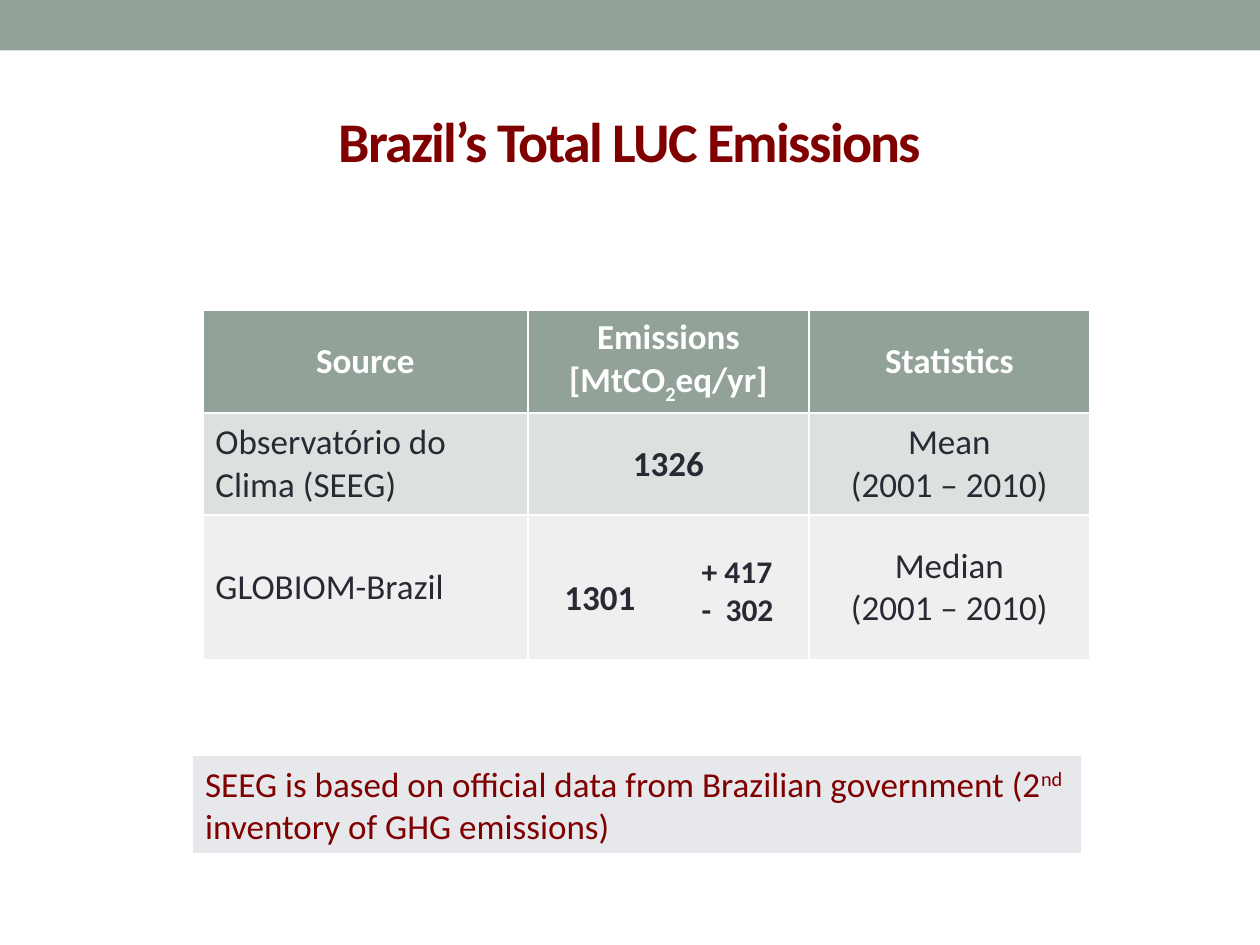
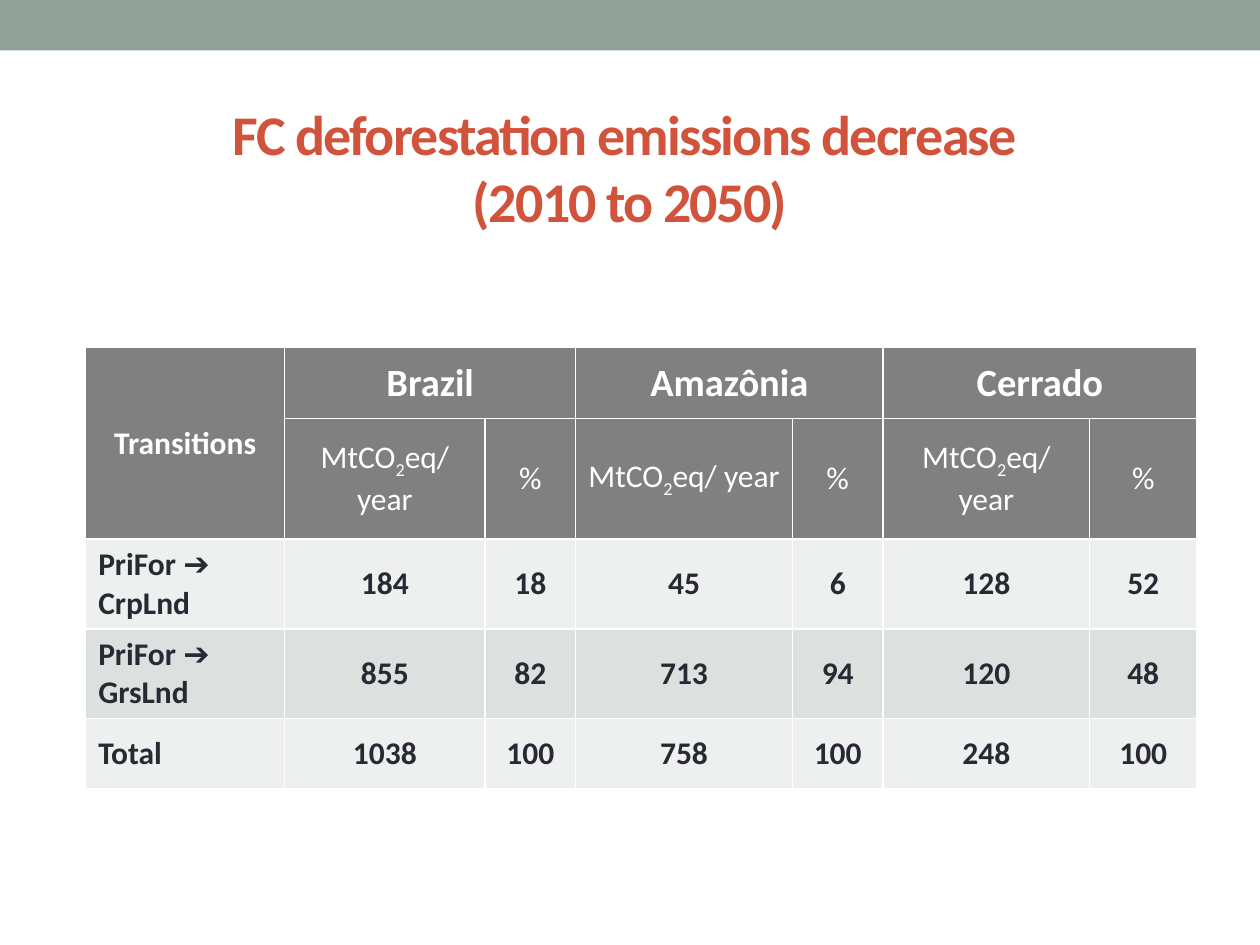
import pptx
import pptx.dml.color
import pptx.enum.text
import pptx.util
from lxml import etree
from pptx.oxml.ns import qn

Inches, Pt = pptx.util.Inches, pptx.util.Pt
RGBColor = pptx.dml.color.RGBColor
ALIGN = pptx.enum.text.PP_ALIGN
ANCHOR = pptx.enum.text.MSO_ANCHOR
AUTO_SIZE = pptx.enum.text.MSO_AUTO_SIZE

SAGE = RGBColor(0x93, 0xA2, 0x99)
GRAY = RGBColor(0x80, 0x80, 0x80)
WHITE = RGBColor(0xFF, 0xFF, 0xFF)
INK = RGBColor(0x29, 0x29, 0x34)
MAROON = RGBColor(0x80, 0x00, 0x00)
ORANGE = RGBColor(0xD2, 0x53, 0x3C)
DARK_ROW = RGBColor(0xDC, 0xE0, 0xDE)
LIGHT_ROW = RGBColor(0xEE, 0xF0, 0xEF)
PALE = RGBColor(0xE6, 0xE8, 0xEC)
FONT = "Calibri"
SUB, SUPER, ARROW = "-25000", "30000", "Arial"

PERIOD = "(2001 – 2010)"
TOTAL_TITLE = "Brazil’s Total LUC Emissions"
TOTAL_ROWS = [
    ["Source", [("Emissions [MtCO", ("2", SUB), "eq/yr]")], "Statistics"],
    ["Observatório do Clima (SEEG)", "1326", ["Mean", PERIOD]],
    ["GLOBIOM-Brazil", "1301", ["Median", PERIOD]],
]
TOTAL_WIDTHS = [2.58, 2.23, 2.23]
TOTAL_HEIGHTS = [0.81, 0.81, 1.15]
RANGE = ["+ 417", "-\t302"]
NOTE = [("SEEG is based on official data from Brazilian government (2",
         ("nd", SUPER), " inventory of GHG emissions)")]

DECREASE_TITLE = "FC deforestation emissions decrease \v(2010 to 2050)"
REGIONS = ["Brazil", "Amazônia", "Cerrado"]
UNIT = [("MtCO", ("2", SUB), "eq/ year")]
LAST_UNIT = [("MtCO", ("2", SUB), "eq/year")]
DECREASE_ROWS = [
    ["Transitions"] + [part for region in REGIONS for part in (region, "")],
    ["", UNIT, "%", UNIT, "%", LAST_UNIT, "%"],
    [[("PriFor ", ("➔ ", ARROW), "CrpLnd")], "184", "18", "45", "6", "128", "52"],
    [[("PriFor ", ("➔", ARROW)), "GrsLnd"], "855", "82", "713", "94", "120", "48"],
    ["Total", "1038", "100", "758", "100", "248", "100"],
]
DECREASE_WIDTHS = [1.58, 1.59, 0.72, 1.72, 0.72, 1.64, 0.85]
DECREASE_HEIGHTS = [0.56, 0.96, 0.71, 0.71, 0.56]


def write(frame, content, size, color, bold=False, align=ALIGN.LEFT, tab=None):
    lines = [content] if isinstance(content, str) else content
    for index, line in enumerate(lines):
        paragraph = frame.paragraphs[0] if index == 0 else frame.add_paragraph()
        paragraph.alignment = align
        if tab:
            stops = etree.SubElement(paragraph._p.get_or_add_pPr(), qn("a:tabLst"))
            etree.SubElement(stops, qn("a:tab"), pos=str(Inches(tab)), algn="l")
        paragraph.font.name = FONT
        paragraph.font.size = Pt(size)
        paragraph.font.bold = bold
        paragraph.font.color.rgb = color
        for piece in [line] if isinstance(line, str) else line:
            text, style = (piece, None) if isinstance(piece, str) else piece
            run = paragraph.add_run()
            run.text = text
            if style == ARROW:
                run.font.name = ARROW
            elif style:
                run._r.get_or_add_rPr().set("baseline", style)


def add_band(slide, layout):
    band = slide.shapes.add_shape(
        pptx.enum.shapes.MSO_SHAPE.RECTANGLE, 0, 0, Inches(10), Inches(0.4))
    band.shadow.inherit = False
    band.fill.solid()
    band.fill.fore_color.rgb = SAGE
    band.line.fill.background()
    layout.shapes.element.insert(2, band.element)


def set_title(slide, text, color, top, height):
    title = slide.shapes.title
    title.left, title.top = Inches(0.5), Inches(top)
    title.width, title.height = Inches(9), Inches(height)
    frame = title.text_frame
    frame.vertical_anchor = ANCHOR.MIDDLE
    frame.auto_size = AUTO_SIZE.NONE
    frame.text = text
    paragraph = frame.paragraphs[0]
    paragraph.alignment = ALIGN.CENTER
    paragraph.font.name = FONT
    paragraph.font.size = Pt(32)
    paragraph.font.bold = True
    paragraph.font.color.rgb = color
    for run in paragraph.runs:
        run._r.get_or_add_rPr().set("spc", "-100")


def add_grid(slide, left, top, widths, heights, fills):
    grid = slide.shapes.add_table(
        len(heights), len(widths), Inches(left), Inches(top),
        Inches(sum(widths)), Inches(sum(heights))).table
    grid.horz_banding = False
    for column, width in zip(grid.columns, widths):
        column.width = Inches(width)
    for row, height, fill in zip(grid.rows, heights, fills):
        row.height = Inches(height)
        for cell in row.cells:
            cell.fill.solid()
            cell.fill.fore_color.rgb = fill
            cell.vertical_anchor = ANCHOR.MIDDLE
    return grid


def add_text(slide, left, top, width, height, wrap):
    box = slide.shapes.add_textbox(
        Inches(left), Inches(top), Inches(width), Inches(height))
    box.text_frame.word_wrap = wrap
    box.text_frame.auto_size = AUTO_SIZE.SHAPE_TO_FIT_TEXT
    return box


def build_total(slide):
    set_title(slide, TOTAL_TITLE, MAROON, 0.57, 1.08)
    grid = add_grid(slide, 1.61, 2.46, TOTAL_WIDTHS, TOTAL_HEIGHTS,
                    [SAGE, DARK_ROW, LIGHT_ROW])
    for r, row in enumerate(TOTAL_ROWS):
        for c, content in enumerate(row):
            header = r == 0
            write(grid.cell(r, c).text_frame, content, 20,
                  WHITE if header else INK, header or c == 1,
                  ALIGN.CENTER if header or c else ALIGN.LEFT)
    median = grid.cell(2, 1)
    median.margin_left = Inches(0.29)
    median.text_frame.paragraphs[0].alignment = ALIGN.LEFT
    median.text_frame.paragraphs[0].line_spacing = 1.5

    spread = add_text(slide, 5.47, 4.33, 0.78, 0.71, False)
    write(spread.text_frame, RANGE, 18, INK, True, tab=0.19)
    note = add_text(slide, 1.53, 6, 7.05, 0.77, True)
    note.fill.solid()
    note.fill.fore_color.rgb = PALE
    write(note.text_frame, NOTE, 20, MAROON)


def build_decrease(slide):
    set_title(slide, DECREASE_TITLE, ORANGE, 0.49, 1.67)
    grid = add_grid(slide, 0.68, 2.76, DECREASE_WIDTHS, DECREASE_HEIGHTS,
                    [GRAY, GRAY, LIGHT_ROW, DARK_ROW, LIGHT_ROW])
    grid.cell(0, 0).merge(grid.cell(1, 0))
    for c in range(1, len(DECREASE_WIDTHS), 2):
        grid.cell(0, c).merge(grid.cell(0, c + 1))
    for r, row in enumerate(DECREASE_ROWS):
        for c, content in enumerate(row):
            if grid.cell(r, c).is_spanned:
                continue
            write(grid.cell(r, c).text_frame, content,
                  22 if r == 0 and c else 18,
                  WHITE if r < 2 else INK, r != 1,
                  ALIGN.CENTER if r < 2 or c else ALIGN.LEFT)


def main():
    deck = pptx.Presentation()
    deck.slide_width, deck.slide_height = Inches(10), Inches(7.5)
    layout = deck.slide_layouts[5]
    total = deck.slides.add_slide(layout)
    add_band(total, layout)
    build_total(total)
    build_decrease(deck.slides.add_slide(layout))
    deck.save("out.pptx")


if __name__ == "__main__":
    main()
